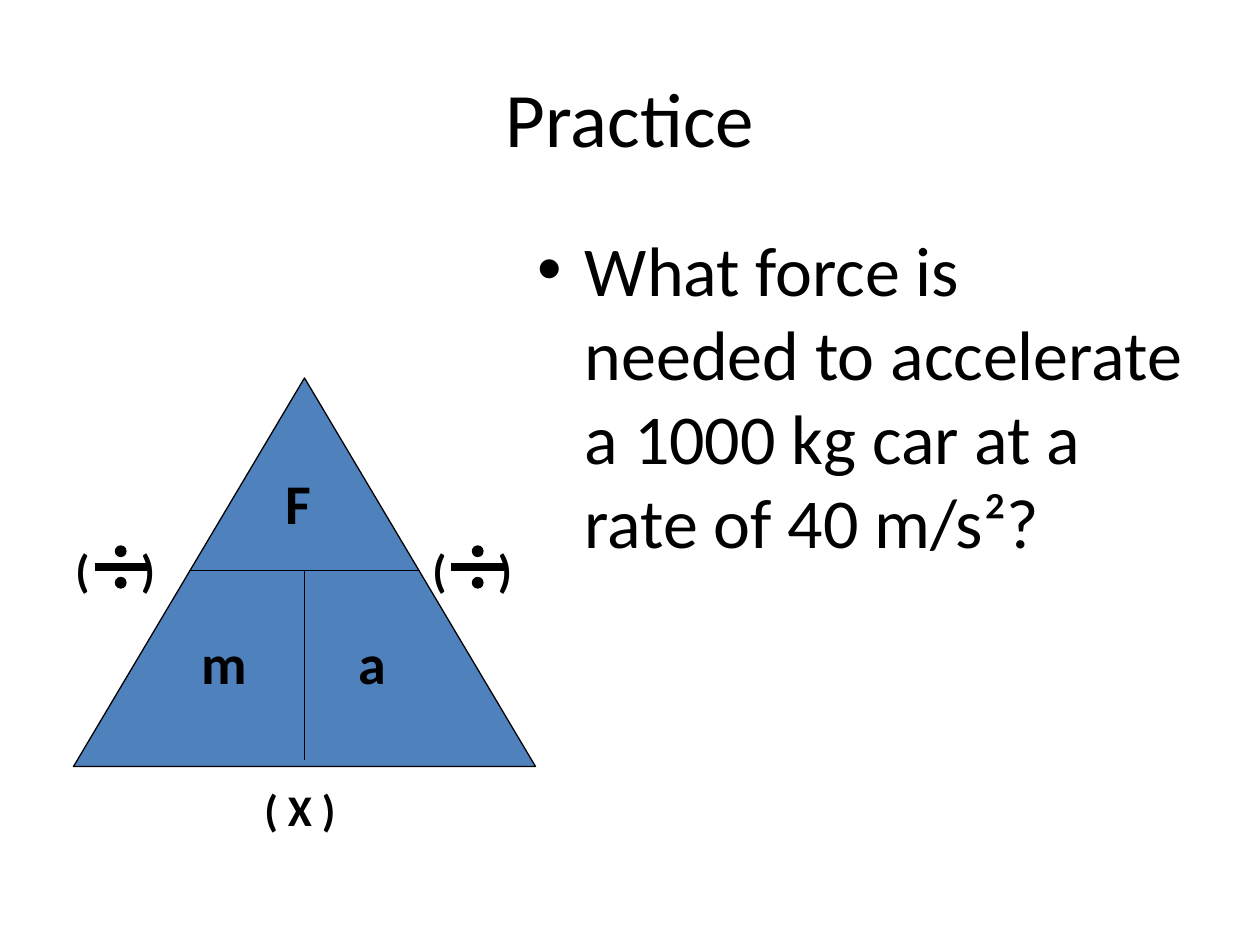
from lxml.etree import SubElement
from pptx import Presentation
from pptx.dml.color import RGBColor
from pptx.enum.shapes import MSO_CONNECTOR as Connector, MSO_SHAPE as Shape
from pptx.enum.text import MSO_ANCHOR as Anchor, MSO_AUTO_SIZE as AutoSize, PP_ALIGN as Align
from pptx.oxml.ns import qn
from pptx.util import Inches, Pt

BLACK = RGBColor(0x00, 0x00, 0x00)
BLUE = RGBColor(0x4F, 0x81, 0xBD)
FONT = "Calibri"
CELL = Inches(1) // 12  # the slide is 120 columns by 90 rows

# Content; places are left, top, width, height in grid cells
TITLE = ("Practice", (6, 3.6, 108, 15), 44)
QUESTION = ("What force is needed to accelerate a 1000 kg car at a rate of 40 m/s²?",
            (50, 21, 64, 59.4), 40)
TRIANGLE = (7, 36, 44, 37)
DIVIDERS = [(18, 54.36, 40, 54.36), (29, 72.36, 29, 54.36)]
LABELS = [
    ("F", (26, 44, 5.6, 7.6), 32),
    ("m", (18, 59.3, 7.2, 7.6), 32),
    ("a", (33, 59.3, 5.4, 7.6), 32),
    ("( X )", (24, 74, 11, 6.2), 25),
]
DIVISION_COLUMNS = (6, 40)
DIVISION_ROW = 51
BRACKET_TAB = 6.24


def cells(values):
    return [round(value * CELL) for value in values]


def format_text(frame, text, size, **formats):
    frame.text = text
    span = frame.paragraphs[0].runs[0]
    for name, value in {"name": FONT, "size": Pt(size), **formats}.items():
        setattr(span.font, name, value)
    span.font.color.rgb = BLACK


def fill_placeholder(box, text, place, size):
    box.left, box.top, box.width, box.height = cells(place)
    format_text(box.text_frame, text, size)


def add_figure(shapes, kind, place, color):
    figure = shapes.add_shape(kind, *cells(place))
    figure.shadow.inherit = False
    figure.fill.solid()
    figure.fill.fore_color.rgb = color
    figure.line.color.rgb = BLACK
    figure.line.width = Pt(0.75)


def add_line(shapes, ends, width):
    line = shapes.add_connector(Connector.STRAIGHT, *cells(ends))
    line.line.color.rgb = BLACK
    line.line.width = Pt(width)
    SubElement(line._element.spPr, qn("a:effectLst"))


def add_label(shapes, text, place, size, wrap=False):
    box = shapes.add_textbox(*cells(place))
    frame = box.text_frame
    format_text(frame, text, size, bold=True)
    frame.word_wrap = wrap
    frame.auto_size = AutoSize.SHAPE_TO_FIT_TEXT
    return frame.paragraphs[0]


def add_division_sign(shapes, column, row):
    for dot_row in (row + 1, row + 4):
        add_figure(shapes, Shape.OVAL, (column + 5, dot_row, 1, 1), BLACK)
    add_line(shapes, (column + 3, row + 3, column + 8, row + 3), 4.5)
    # A tab stop holds the brackets apart, around the sign
    para = add_label(shapes, "(\t)", (column, row, 11.3, 6.4), 26, wrap=True)
    tabs = SubElement(para._p.get_or_add_pPr(), qn("a:tabLst"))
    SubElement(tabs, qn("a:tab"), pos=str(round(BRACKET_TAB * CELL)), algn="l")


def main():
    deck = Presentation()
    deck.slide_width, deck.slide_height = cells((120, 90))
    page = deck.slides.add_slide(deck.slide_layouts[1])

    # Title and question
    title, body = page.placeholders
    fill_placeholder(title, *TITLE)
    title.text_frame.vertical_anchor = Anchor.MIDDLE
    title.text_frame.paragraphs[0].alignment = Align.CENTER
    fill_placeholder(body, *QUESTION)

    # Formula triangle
    shapes = page.shapes.add_group_shape().shapes
    add_figure(shapes, Shape.ISOSCELES_TRIANGLE, TRIANGLE, BLUE)
    for ends in DIVIDERS:
        add_line(shapes, ends, 0.75)
    for text, place, size in LABELS:
        add_label(shapes, text, place, size)

    # Division signs on both sides
    for column in DIVISION_COLUMNS:
        add_division_sign(shapes, column, DIVISION_ROW)

    deck.save("out.pptx")


if __name__ == "__main__":
    main()
